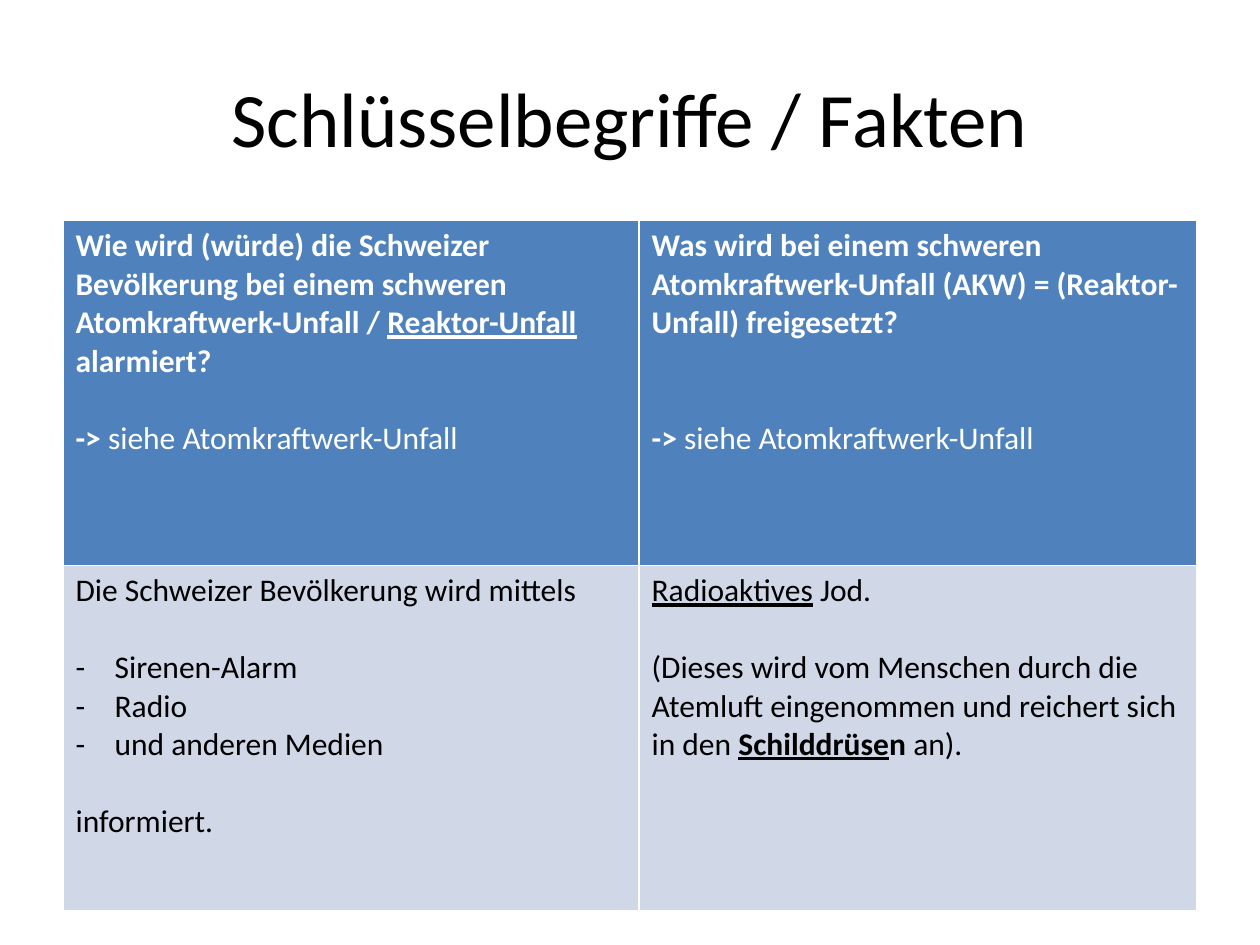
from dataclasses import dataclass

from lxml import etree
from pptx import Presentation
from pptx.dml.color import RGBColor
from pptx.enum.text import MSO_ANCHOR, PP_ALIGN
from pptx.oxml.ns import qn
from pptx.util import Inches, Pt

CENTER = PP_ALIGN.CENTER
MIDDLE = MSO_ANCHOR.MIDDLE
TITLE_ONLY = 5


@dataclass(frozen=True)
class Theme:
    """Colours, font, type sizes and line spacing of the slide."""
    font: str = "Calibri"
    title_size: int = 44
    body_size: int = 18
    line_height: int = 22
    dark: str = "000000"
    light: str = "FFFFFF"
    header_fill: str = "4F81BD"
    answer_fill: str = "D0D8E8"


@dataclass(frozen=True)
class Area:
    """A rectangle in shares of the slide's width and height."""
    left: float
    top: float
    width: float
    height: float


@dataclass(frozen=True)
class Span:
    """A stretch of text in one format."""
    text: str
    bold: bool = False
    underline: bool = False


@dataclass(frozen=True)
class Line:
    """A paragraph with the number of empty lines above it."""
    spans: tuple[Span, ...]
    gap: int = 0
    dashed: bool = False


THEME = Theme()
WIDTH, HEIGHT = Inches(10), Inches(7.5)
TITLE_AREA = Area(0.05, 0.04, 0.9, 1 / 6)
TABLE_AREA = Area(0.05, 7 / 30, 0.9, 0.73)
COLUMN_SHARES = (0.508, 0.492)
DASH_INDENT = Inches(0.31)
REFERENCE = (Span("-> ", bold=True), Span("siehe Atomkraftwerk-Unfall"))
MEDIA = ("Sirenen-Alarm", "Radio", "und anderen Medien")

QUESTIONS = (
    (
        Line((
            Span("Wie wird (würde) die Schweizer Bevölkerung bei einem schweren "
                 "Atomkraftwerk-Unfall / ", bold=True),
            Span("Reaktor-Unfall", bold=True, underline=True),
            Span(" alarmiert?", bold=True),
        )),
        Line(REFERENCE, gap=1),
    ),
    (
        Line((Span("Was wird bei einem schweren Atomkraftwerk-Unfall (AKW) = "
                   "(Reaktor-Unfall) freigesetzt?", bold=True),)),
        Line(REFERENCE, gap=2),
    ),
)
ANSWERS = (
    (
        Line((Span("Die Schweizer Bevölkerung wird mittels"),)),
        *(Line((Span(medium),), gap=int(index == 0), dashed=True)
          for index, medium in enumerate(MEDIA)),
        Line((Span("informiert."),), gap=1),
    ),
    (
        Line((Span("Radioaktives", underline=True), Span(" Jod."))),
        Line((
            Span("(Dieses wird vom Menschen durch die Atemluft eingenommen und "
                 "reichert sich in den "),
            Span("Schilddrüse", bold=True, underline=True),
            Span("n ", bold=True),
            Span("an)."),
        ), gap=1),
    ),
)


def place(area: Area) -> tuple[int, int, int, int]:
    """Turn shares of the slide into left, top, width and height."""
    return (int(area.left * WIDTH), int(area.top * HEIGHT),
            int(area.width * WIDTH), int(area.height * HEIGHT))


def add_text(para, text: str, *, size: int, color: str,
             bold: bool = False, underline: bool = False) -> None:
    """Add formatted text to a paragraph."""
    font = (run := para.add_run()).font
    run.text = text
    font.name, font.size = THEME.font, Pt(size)
    font.bold, font.underline = bold, underline
    font.color.rgb = RGBColor.from_string(color)


def add_dash(para) -> None:
    """Give a paragraph a hanging dash."""
    properties = para._p.get_or_add_pPr()
    properties.set("marL", str(DASH_INDENT))
    properties.set("indent", str(-DASH_INDENT))
    etree.SubElement(properties, qn("a:buFont"), typeface=THEME.font)
    etree.SubElement(properties, qn("a:buChar"), char="-")


def fill_cell(cell, lines: tuple[Line, ...], fill: str, color: str) -> None:
    """Colour a table cell and write its paragraphs."""
    cell.fill.solid()
    cell.fill.fore_color.rgb = RGBColor.from_string(fill)
    frame = cell.text_frame
    for index, line in enumerate(lines):
        para = frame.add_paragraph() if index else frame.paragraphs[0]
        if line.gap:
            para.space_before = Pt(line.gap * THEME.line_height)
        if line.dashed:
            add_dash(para)
        for span in line.spans:
            add_text(para, span.text, size=THEME.body_size, color=color,
                     bold=span.bold, underline=span.underline)


def add_title(page, text: str) -> None:
    """Place and write the slide title."""
    title = page.shapes.title
    title.left, title.top, title.width, title.height = place(TITLE_AREA)
    title.text_frame.vertical_anchor = MIDDLE
    para = title.text_frame.paragraphs[0]
    para.alignment = CENTER
    add_text(para, text, size=THEME.title_size, color=THEME.dark)


def add_facts(page) -> None:
    """Add the table of questions and answers."""
    rows = ((QUESTIONS, THEME.header_fill, THEME.light),
            (ANSWERS, THEME.answer_fill, THEME.dark))
    frame = page.shapes.add_table(len(rows), len(COLUMN_SHARES), *place(TABLE_AREA))
    table = frame.table
    for column, share in zip(table.columns, COLUMN_SHARES):
        column.width = int(share * TABLE_AREA.width * WIDTH)
    for row, (contents, fill, color) in zip(table.rows, rows):
        for cell, lines in zip(row.cells, contents):
            fill_cell(cell, lines, fill, color)


def main() -> None:
    """Build and save the slide."""
    deck = Presentation()
    deck.slide_width, deck.slide_height = WIDTH, HEIGHT
    page = deck.slides.add_slide(deck.slide_layouts[TITLE_ONLY])
    add_title(page, "Schlüsselbegriffe / Fakten")
    add_facts(page)
    deck.save("out.pptx")


if __name__ == "__main__":
    main()
